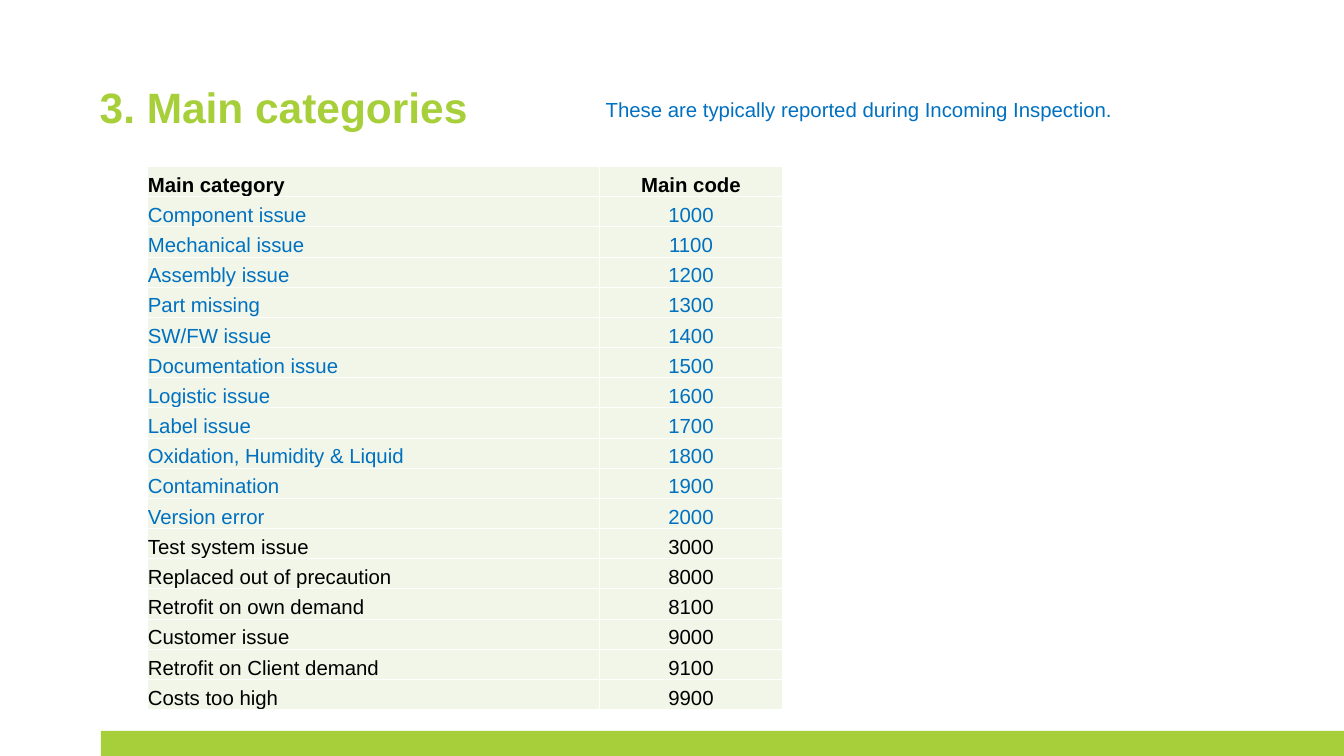
from lxml import etree
from pptx import Presentation
from pptx.dml.color import RGBColor
from pptx.enum.shapes import MSO_SHAPE
from pptx.enum.text import MSO_ANCHOR, PP_ALIGN
from pptx.oxml.ns import qn
from pptx.util import Pt

TITLE = "3. Main categories"
NOTE = "These are typically reported during Incoming Inspection."
HEAD = ("Main category", "Main code")
INCOMING = [
    ("Component issue", 1000),
    ("Mechanical issue", 1100),
    ("Assembly issue", 1200),
    ("Part missing", 1300),
    ("SW/FW issue", 1400),
    ("Documentation issue", 1500),
    ("Logistic issue", 1600),
    ("Label issue", 1700),
    ("Oxidation, Humidity & Liquid", 1800),
    ("Contamination", 1900),
    ("Version error", 2000),
]
OTHER = [
    ("Test system issue", 3000),
    ("Replaced out of precaution", 8000),
    ("Retrofit on own demand", 8100),
    ("Customer issue", 9000),
    ("Retrofit on Client demand", 9100),
    ("Costs too high", 9900),
]

GREEN = RGBColor(0xA6, 0xCF, 0x39)
PALE = RGBColor(0xF1, 0xF6, 0xE8)
BLUE = RGBColor(0x00, 0x70, 0xC0)
BLACK = RGBColor(0, 0, 0)
LEFT, CENTER = PP_ALIGN.LEFT, PP_ALIGN.CENTER
MIDDLE, BOTTOM = MSO_ANCHOR.MIDDLE, MSO_ANCHOR.BOTTOM
RECT = MSO_SHAPE.RECTANGLE

WIDE, HIGH = 1583.28, 890.64
BAR_X, BAR_H = 118.8, 29.5
COLS = (532.8, 215.5)
ROW_H = 35.55


def place(x, y, w, h):
    return Pt(x), Pt(y), Pt(w), Pt(h)


def style(para, size, color, bold=False, align=LEFT):
    font = para.font
    font.name, font.size, font.bold = "Arial", Pt(size), bold
    font.color.rgb = color
    para.alignment = align


def add_borders(cell):
    """Give the cell white one-point lines; call before setting its fill."""
    props = cell._tc.get_or_add_tcPr()
    for side in ("lnL", "lnR", "lnT", "lnB"):
        line = etree.SubElement(props, qn(f"a:{side}"), w=str(Pt(1)))
        fill = etree.SubElement(line, qn("a:solidFill"))
        etree.SubElement(fill, qn("a:srgbClr"), val="FFFFFF")


def fill_cell(cell, text, color, bold, align):
    cell.text = str(text)
    cell.vertical_anchor = BOTTOM
    cell.margin_left = cell.margin_right = cell.margin_top = Pt(0.7)
    cell.margin_bottom = 0
    style(cell.text_frame.paragraphs[0], 24, color, bold, align)
    add_borders(cell)
    cell.fill.solid()
    cell.fill.fore_color.rgb = PALE


def add_codes(slide):
    rows = [(HEAD, BLACK, True)]
    rows += [(row, BLUE, False) for row in INCOMING]
    rows += [(row, BLACK, False) for row in OTHER]
    area = place(173.5, 196, sum(COLS), ROW_H * len(rows))
    table = slide.shapes.add_table(len(rows), len(COLS), *area).table
    table.first_row = table.horz_banding = False
    for col, width in zip(table.columns, COLS):
        col.width = Pt(width)
    for r, (texts, color, bold) in enumerate(rows):
        table.rows[r].height = Pt(ROW_H)
        for c, (text, align) in enumerate(zip(texts, (LEFT, CENTER))):
            fill_cell(table.cell(r, c), text, color, bold, align)


def main():
    prs = Presentation()
    prs.slide_width, prs.slide_height = Pt(WIDE), Pt(HIGH)
    slide = prs.slides.add_slide(prs.slide_layouts[5])

    bar = slide.shapes.add_shape(
        RECT, *place(BAR_X, HIGH - BAR_H, WIDE - BAR_X, BAR_H))
    bar.shadow.inherit = False
    bar.fill.solid()
    bar.fill.fore_color.rgb = GREEN
    bar.line.fill.background()

    title = slide.shapes.title
    title.left, title.top, title.width, title.height = place(
        117.4, 95, 1347.8, 61.2)
    frame = title.text_frame
    frame.text = TITLE
    frame.vertical_anchor = MIDDLE
    frame.margin_left = frame.margin_right = 0
    frame.margin_top = frame.margin_bottom = 0
    style(frame.paragraphs[0], 50, GREEN, bold=True)

    add_codes(slide)

    note = slide.shapes.add_textbox(*place(706.3, 110.9, 805, 36))
    note.text_frame.word_wrap = True
    note.text_frame.text = NOTE
    style(note.text_frame.paragraphs[0], 24, BLUE)

    prs.save("out.pptx")


if __name__ == "__main__":
    main()
